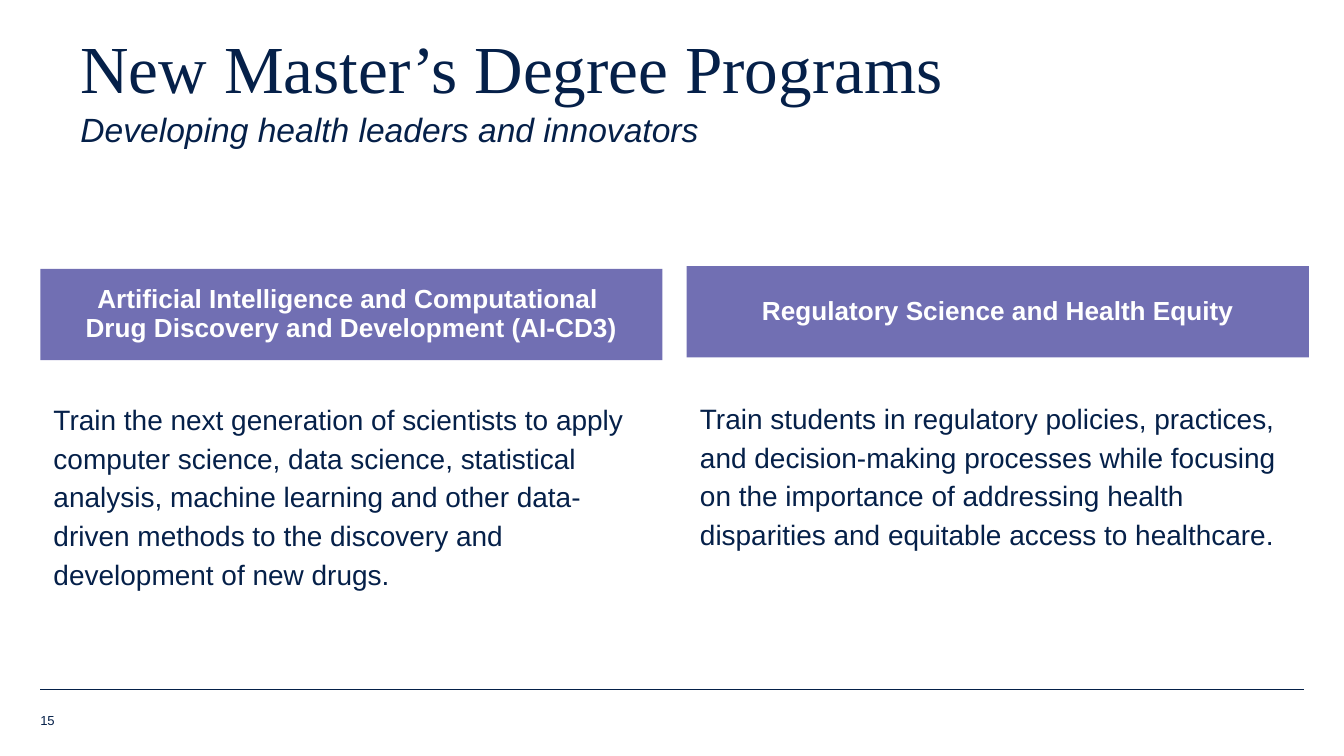
from pptx import Presentation
from pptx.dml.color import RGBColor
from pptx.enum.shapes import MSO_CONNECTOR, MSO_SHAPE
from pptx.enum.text import MSO_ANCHOR, PP_ALIGN
from pptx.oxml.ns import qn
from pptx.util import Inches, Pt
from lxml.etree import SubElement

NAVY = RGBColor(0x05, 0x20, 0x49)
PURPLE = RGBColor(0x71, 0x6F, 0xB3)
WHITE = RGBColor(0xFF, 0xFF, 0xFF)


def style(shape, text, size, color=NAVY, font="Arial", bold=False, italic=False,
          align=PP_ALIGN.LEFT, spacing=1.0, anchor=MSO_ANCHOR.TOP, wrap=True):
    """Fill a shape with text and format every run."""
    frame = shape.text_frame
    frame.text = text
    frame.word_wrap = wrap
    frame.vertical_anchor = anchor
    for para in frame.paragraphs:
        para.alignment = align
        para.line_spacing = spacing
        for run in para.runs:
            run.font.name = font
            run.font.size = Pt(size)
            run.font.bold = bold
            run.font.italic = italic
            run.font.color.rgb = color


def add_text(slide, left, top, width, height, text, size, pad=None, **look):
    box = slide.shapes.add_textbox(
        Inches(left), Inches(top), Inches(width), Inches(height))
    style(box, text, size, **look)
    if pad is not None:
        frame = box.text_frame
        frame.margin_left = frame.margin_right = Inches(pad)
        frame.margin_top = frame.margin_bottom = Inches(pad)
    return box


def add_heading(slide, left, top, width):
    add_text(slide, left, top, width, 0.5, "New Master’s Degree Programs", 36,
             font="Times New Roman", spacing=0.85, anchor=MSO_ANCHOR.BOTTOM)
    subtitle = add_text(slide, left, top + 0.41, width, 0.37,
                        "Developing health leaders and innovators", 18, italic=True)
    subtitle.text_frame.paragraphs[0].space_after = Pt(6)


def add_program(slide, left, top, width, name, summary, gap, height, pad=None):
    # Coloured name bar
    bar = slide.shapes.add_shape(
        MSO_SHAPE.RECTANGLE, Inches(left), Inches(top), Inches(width), Inches(0.68))
    bar.shadow.inherit = False
    bar.fill.solid()
    bar.fill.fore_color.rgb = PURPLE
    bar.line.fill.background()
    style(bar, name, 14, color=WHITE, bold=True, align=PP_ALIGN.CENTER,
          spacing=0.9, anchor=MSO_ANCHOR.MIDDLE, wrap=False)
    # Summary below the bar
    add_text(slide, left, top + gap, width, height, summary, 15, pad=pad, spacing=1.15)


def add_footer(slide, left, top, width):
    rule = slide.shapes.add_connector(
        MSO_CONNECTOR.STRAIGHT, Inches(left), Inches(top),
        Inches(left + width), Inches(top))
    rule.line.color.rgb = NAVY
    rule.line.width = Pt(0.25)
    SubElement(rule._element.spPr, qn("a:effectLst"))
    add_text(slide, left, top + 0.16, 0.27, 0.13, "15", 7, pad=0,
             anchor=MSO_ANCHOR.BOTTOM)


def main():
    deck = Presentation()
    # Widescreen 16:9 page
    deck.slide_width = Inches(10)
    deck.slide_height = Inches(10 * 9 / 16)
    slide = deck.slides.add_slide(deck.slide_layouts[6])

    add_footer(slide, 0.3, 5.13, 9.4)
    add_heading(slide, 0.5, 0.35, 8.48)
    add_program(
        slide, 0.3, 2, 4.63,
        "Artificial Intelligence and Computational \n"
        "Drug Discovery and Development (AI-CD3)",
        "Train the next generation of scientists to apply computer science, "
        "data science, statistical analysis, machine learning and other "
        "data-driven methods to the discovery and development of new drugs.",
        gap=0.91, height=1.53)
    add_program(
        slide, 5.11, 1.98, 4.63,
        "Regulatory Science and Health Equity",
        "Train students in regulatory policies, practices, and decision-making "
        "processes while focusing on the importance of addressing health "
        "disparities and equitable access to healthcare.",
        gap=0.87, height=1.36, pad=0.1)

    deck.save("out.pptx")


if __name__ == "__main__":
    main()
